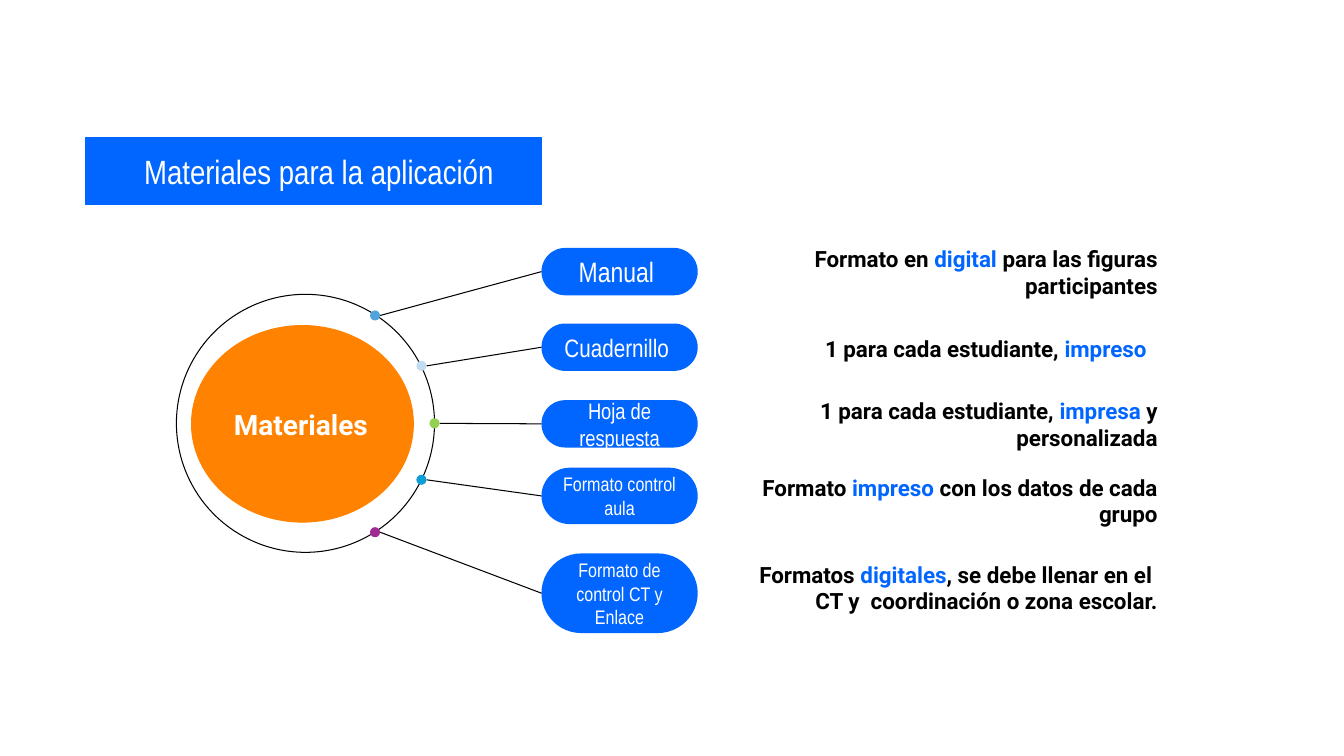
from dataclasses import dataclass
from typing import Optional

from lxml.etree import SubElement
from pptx import Presentation
from pptx.dml.color import RGBColor
from pptx.enum.shapes import MSO_CONNECTOR as Connector, MSO_SHAPE as Preset
from pptx.enum.text import MSO_ANCHOR as Anchor, PP_ALIGN as Align
from pptx.oxml.ns import qn
from pptx.util import Inches, Pt

COLORS = {
    "blue": "0066FF",
    "orange": "FF8200",
    "black": "000000",
    "white": "FFFFFF",
    "sky": "51A4DB",
    "pale": "C3DCF1",
    "green": "92D050",
    "teal": "0F9ED5",
    "purple": "A02B93",
}
NARROW = {"name": "Arial Narrow", "bold": False}
STRONG = {"name": "Roboto", "bold": True}
PILL_LEFT, PILL_WIDTH = 5.37, 1.55
DOT_SIZE = 0.1
NOTE_RIGHT = 11.58
LINE_WIDTH = 0.75


@dataclass
class Box:
    left: float
    top: float
    width: float
    height: float

    def lengths(self) -> list:
        return [Inches(value) for value in (self.left, self.top, self.width, self.height)]


@dataclass
class Material:
    label: str
    size: int
    top: float
    height: float
    dot_left: float
    dot_top: float
    dot_color: str
    note: tuple
    note_left: float
    note_top: float
    note_height: float = 0.65


MATERIALS = [
    Material("Manual ", 20, 2.46, 0.47, 3.67, 3.08, "sky",
             ("Formato en ", "digital", " para las figuras participantes"), 6.96, 2.37),
    Material("Cuadernillo ", 18, 3.21, 0.47, 4.13, 3.58, "pale",
             ("1 para cada estudiante, ", "impreso  "), 7.24, 3.13),
    Material("Hoja de respuesta", 16, 3.97, 0.47, 4.26, 4.15, "green",
             ("1 para cada estudiante, ", "impresa", " y personalizada"), 7.24, 3.88),
    Material("Formato control aula", 14, 4.64, 0.56, 4.13, 4.71, "teal",
             ("Formato ", "impreso", " con los datos de cada grupo"), 7.33, 4.64),
    Material("Formato de control CT y Enlace", 14, 5.49, 0.79, 3.67, 5.23, "purple",
             ("Formatos ", "digitales", ", se debe llenar en el  CT y  coordinación o zona escolar."),
             7.24, 5.53, 0.6),
]


def color(name: str) -> RGBColor:
    return RGBColor.from_string(COLORS[name])


def draw_shape(slide, preset, box: Box, fill: Optional[str] = None, line: Optional[str] = None):
    shape = slide.shapes.add_shape(preset, *box.lengths())
    shape.shadow.inherit = False
    if fill:
        shape.fill.solid()
        shape.fill.fore_color.rgb = color(fill)
    else:
        shape.fill.background()
    if line:
        shape.line.color.rgb = color(line)
        shape.line.width = Pt(LINE_WIDTH)
    else:
        shape.line.fill.background()
    return shape


def write_text(shape, runs: list, size: int, font_format: dict, align, left_inset: float = 0.1) -> None:
    frame_format = {
        "word_wrap": True,
        "vertical_anchor": Anchor.MIDDLE,
        "margin_left": Inches(left_inset),
        "margin_right": Inches(0.1),
        "margin_top": Inches(0.1),
        "margin_bottom": Inches(0.1),
    }
    frame = shape.text_frame
    for name, value in frame_format.items():
        setattr(frame, name, value)
    paragraph = frame.paragraphs[0]
    paragraph.alignment = align
    for text, color_name in runs:
        run = paragraph.add_run()
        run.text = text
        for name, value in {**font_format, "size": Pt(size)}.items():
            setattr(run.font, name, value)
        run.font.color.rgb = color(color_name)


def draw_link(slide, material: Material) -> None:
    ends = (PILL_LEFT, material.top + material.height / 2,
            material.dot_left + DOT_SIZE, material.dot_top + DOT_SIZE / 2)
    link = slide.shapes.add_connector(Connector.STRAIGHT, *[Inches(value) for value in ends])
    link.line.color.rgb = color("black")
    link.line.width = Pt(LINE_WIDTH)
    SubElement(link._element.spPr, qn("a:effectLst"))


def draw_material(slide, material: Material) -> None:
    pill = draw_shape(slide, Preset.ROUNDED_RECTANGLE,
                      Box(PILL_LEFT, material.top, PILL_WIDTH, material.height), "blue")
    pill.adjustments[0] = 0.5
    write_text(pill, [(material.label, "white")], material.size, NARROW, Align.CENTER)
    draw_link(slide, material)
    draw_shape(slide, Preset.OVAL,
               Box(material.dot_left, material.dot_top, DOT_SIZE, DOT_SIZE), material.dot_color)
    note_box = Box(material.note_left, material.note_top,
                   NOTE_RIGHT - material.note_left, material.note_height)
    note = slide.shapes.add_textbox(*note_box.lengths())
    runs = list(zip(material.note, ("black", "blue", "black")))
    write_text(note, runs, 16, STRONG, Align.RIGHT)


def main() -> None:
    presentation = Presentation()
    presentation.slide_width = Inches(13.33)
    presentation.slide_height = Inches(7.5)
    slide = presentation.slides.add_slide(presentation.slide_layouts[6])

    title = draw_shape(slide, Preset.RECTANGLE, Box(0.85, 1.36, 4.52, 0.67), "blue", "blue")
    write_text(title, [("Materiales para la aplicación", "white")], 24, NARROW, Align.CENTER, 0.2)

    draw_shape(slide, Preset.OVAL, Box(1.75, 2.92, 2.56, 2.56), line="black")
    draw_shape(slide, Preset.OVAL, Box(1.9, 3.08, 2.26, 2.26), "white")
    hub = draw_shape(slide, Preset.OVAL, Box(1.9, 3.23, 2.2, 1.95), "orange", "orange")
    write_text(hub, [("Materiales", "white")], 20, STRONG, Align.LEFT)

    for material in MATERIALS:
        draw_material(slide, material)
    presentation.save("out.pptx")


if __name__ == "__main__":
    main()
